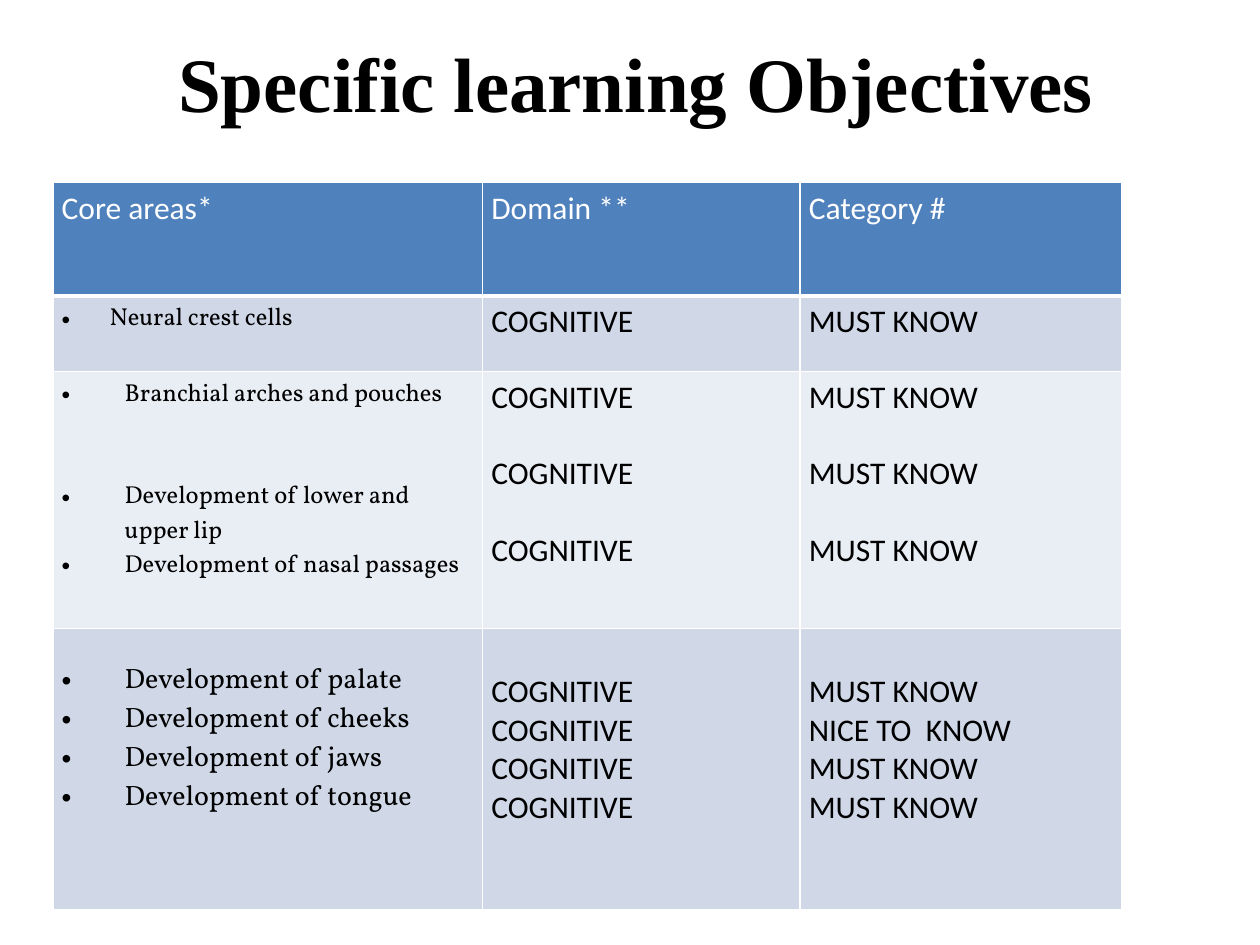
from dataclasses import dataclass

from lxml.etree import SubElement
from pptx import Presentation
from pptx.dml.color import RGBColor
from pptx.enum.text import MSO_ANCHOR as Anchor, PP_ALIGN as Align
from pptx.oxml.ns import qn
from pptx.slide import Slide
from pptx.table import _Cell as Cell
from pptx.text.text import _Paragraph as Para
from pptx.util import Inches, Pt

BLACK = RGBColor(0, 0, 0)
WHITE = RGBColor(255, 255, 255)
BLUE = RGBColor(0x4F, 0x81, 0xBD)
BAND = RGBColor(0xD0, 0xD8, 0xE8)
PALE = RGBColor(0xE9, 0xED, 0xF4)
WIDTHS = (3.41, 2.52, 2.55)


@dataclass(frozen=True)
class Entry:
    lines: tuple[str, ...]
    size: int = 18
    font: str = "Calibri"
    indent: float = 0
    top: float = 0.05
    gaps: tuple[int, ...] = ()


@dataclass(frozen=True)
class Row:
    height: float
    fill: RGBColor
    entries: tuple[Entry, ...]
    ink: RGBColor = BLACK
    rule: int = 1


def topics(*lines: str, size: int = 14, indent: float = 0.5,
           top: float = 0.05, gaps: tuple[int, ...] = ()) -> Entry:
    return Entry(lines, size, "Vollkorn", indent, top, gaps)


ROWS = (
    Row(0.9, BLUE, (Entry(("Core areas*",)), Entry(("Domain **",)),
                    Entry(("Category #",))), WHITE, 3),
    Row(0.6, BAND, (topics("Neural crest cells", indent=0.38),
                    Entry(("COGNITIVE",)), Entry(("MUST KNOW",)))),
    Row(2.04, PALE, (
        topics("Branchial arches and pouches",
               "Development of lower and upper lip",
               "Development of nasal passages", gaps=(0, 39, 0)),
        Entry(("COGNITIVE",) * 3, gaps=(0, 22, 22)),
        Entry(("MUST KNOW",) * 3, gaps=(0, 22, 22)))),
    Row(2.23, BAND, (
        topics("Development of palate", "Development of cheeks",
               "Development of jaws", "Development of tongue",
               size=16, top=0.26),
        Entry(("COGNITIVE",) * 4, top=0.35),
        Entry(("MUST KNOW", "NICE TO  KNOW", "MUST KNOW", "MUST KNOW"),
              top=0.35))),
)


def write(para: Para, text: str, size: int, font: str,
          ink: RGBColor, bold: bool = False) -> None:
    run = para.add_run()
    run.text = text
    run.font.size = Pt(size)
    run.font.name = font
    run.font.bold = bold
    run.font.color.rgb = ink


def bullet(para: Para, indent: float) -> None:
    props = para._p.get_or_add_pPr()
    props.set("marL", str(Inches(indent)))
    props.set("indent", str(-Inches(indent)))
    SubElement(props, qn("a:buFont"), typeface="Arial")
    SubElement(props, qn("a:buChar"), char="•")


def border(cell: Cell, rule: int) -> None:
    props = cell._tc.get_or_add_tcPr()
    for spot, side in enumerate("LRTB"):
        width = rule if side == "B" else 1
        line = SubElement(props, qn(f"a:ln{side}"), w=str(Pt(width)))
        solid = SubElement(line, qn("a:solidFill"))
        SubElement(solid, qn("a:srgbClr"), val=str(WHITE))
        props.insert(spot, line)


def fill_cell(cell: Cell, entry: Entry, row: Row) -> None:
    cell.fill.solid()
    cell.fill.fore_color.rgb = row.fill
    border(cell, row.rule)
    cell.margin_left = cell.margin_right = Inches(0.07)
    cell.margin_top = Inches(entry.top)
    cell.margin_bottom = Inches(0.05)
    frame = cell.text_frame
    for spot, text in enumerate(entry.lines):
        para = frame.add_paragraph() if spot else frame.paragraphs[0]
        if entry.gaps:
            para.space_before = Pt(entry.gaps[spot])
        if entry.indent:
            bullet(para, entry.indent)
        write(para, text, entry.size, entry.font, row.ink)


def add_title(slide: Slide) -> None:
    box = slide.shapes.add_textbox(Inches(1.25), Inches(0.04),
                                   Inches(7.6), Inches(1.21))
    frame = box.text_frame
    frame.word_wrap = True
    frame.vertical_anchor = Anchor.MIDDLE
    para = frame.paragraphs[0]
    para.alignment = Align.CENTER
    write(para, "Specific learning Objectives", 44, "Times New Roman",
          BLACK, True)


def add_goals(slide: Slide) -> None:
    high = sum(row.height for row in ROWS)
    table = slide.shapes.add_table(
        len(ROWS), len(WIDTHS), Inches(0.42), Inches(1.45),
        Inches(sum(WIDTHS)), Inches(high)).table
    for column, width in zip(table.columns, WIDTHS):
        column.width = Inches(width)
    for line, row in zip(table.rows, ROWS):
        line.height = Inches(row.height)
        for cell, entry in zip(line.cells, row.entries):
            fill_cell(cell, entry, row)


def main() -> None:
    deck = Presentation()
    deck.slide_width = Inches(10)
    deck.slide_height = Inches(7.5)
    slide = deck.slides.add_slide(deck.slide_layouts[6])
    add_title(slide)
    add_goals(slide)
    deck.save("out.pptx")


if __name__ == "__main__":
    main()
